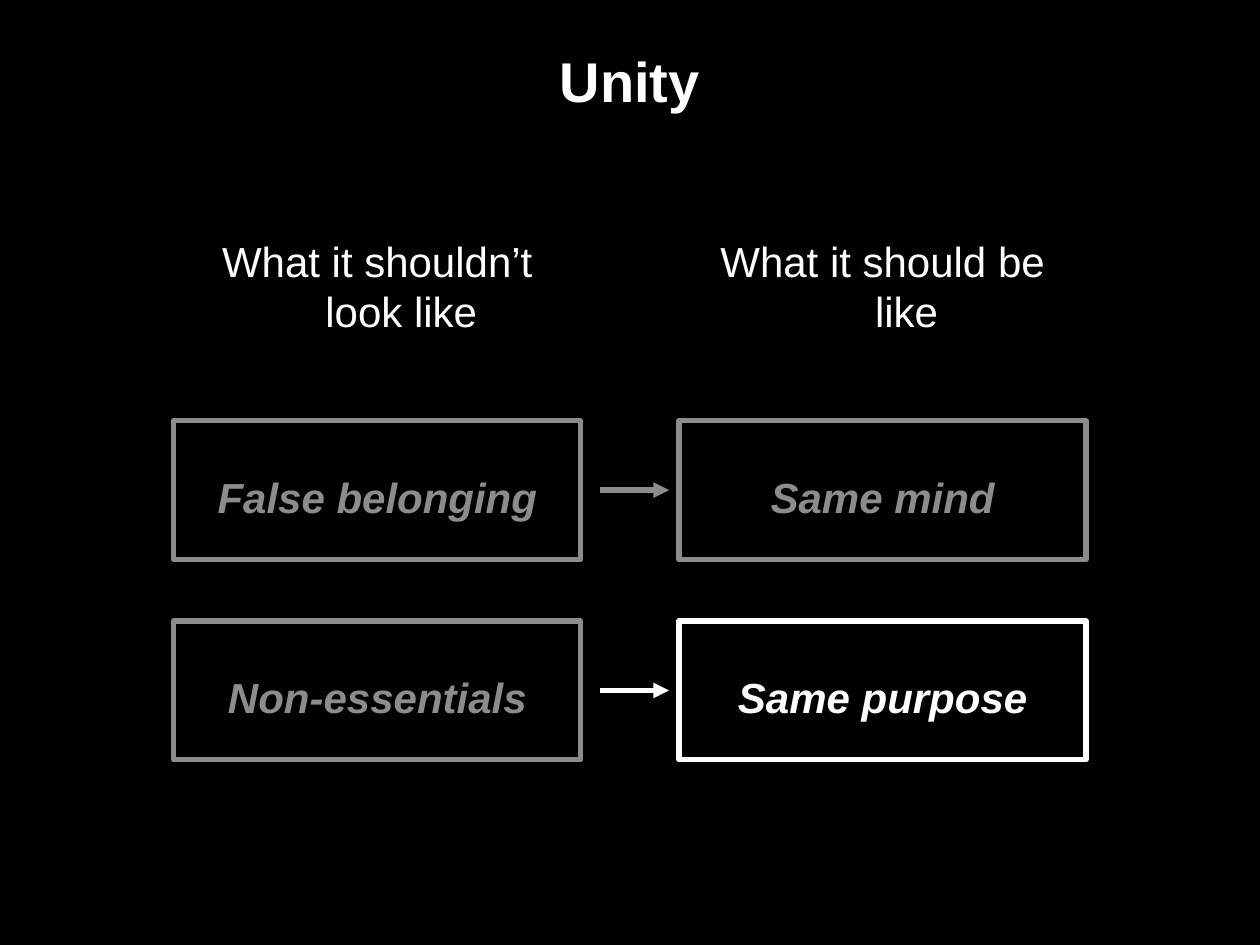
from lxml import etree
from pptx import Presentation
from pptx import util as u
from pptx.dml.color import RGBColor
from pptx.enum import shapes, text
from pptx.oxml import ns

COLORS = {"ground": "000000", "ink": "FFFFFF"}


class SlideBuilder:
    font = {"name": "Arial", "size": u.Pt(24)}
    stroke = u.Pt(3)

    def __init__(self, deck):
        self.page = deck.slides.add_slide(deck.slide_layouts[6])
        fill = self.page.background.fill
        fill.solid()
        fill.fore_color.rgb = self.color("ground")

    def color(self, name):
        return RGBColor.from_string(COLORS[name])

    def label(self, words, left, top, width, height, hanging=True, **style):
        box = self.page.shapes.add_textbox(*map(u.Inches, (left, top, width, height)))
        frame = box.text_frame
        frame.word_wrap = True
        frame.vertical_anchor = text.MSO_ANCHOR.TOP
        frame.margin_top = u.Inches(0.09)
        para = frame.paragraphs[0]
        para.alignment = text.PP_ALIGN.CENTER
        if hanging:
            indent = u.Inches(0.38)
            properties = para._p.get_or_add_pPr()
            properties.set("marL", str(indent))
            properties.set("indent", str(-indent))
            para.space_after = u.Pt(12)
        span = para.add_run()
        span.text = words
        for key, value in {**self.font, **style}.items():
            setattr(span.font, key, value)
        span.font.color.rgb = self.color("ink")

    def rectangle(self, left, top, width, height):
        box = self.page.shapes.add_shape(
            shapes.MSO_SHAPE.RECTANGLE, *map(u.Inches, (left, top, width, height)))
        box.shadow.inherit = False
        return box

    def frame(self, *place):
        box = self.rectangle(*place)
        box.fill.background()
        box.line.color.rgb = self.color("ink")
        box.line.width = self.stroke

    def veil(self, *place, opacity=45):
        box = self.rectangle(*place)
        box.line.fill.background()
        box.fill.solid()
        box.fill.fore_color.rgb = self.color("ground")
        tint = box._element.spPr.find(ns.qn("a:solidFill"))[0]
        etree.SubElement(tint, ns.qn("a:alpha"), val=str(opacity * 1000))

    def arrow(self, start, end, y):
        line = self.page.shapes.add_connector(
            shapes.MSO_CONNECTOR.STRAIGHT, *map(u.Inches, (start, y, end, y)))
        line.line.color.rgb = self.color("ink")
        line.line.width = self.stroke
        etree.SubElement(line.line._get_or_add_ln(), ns.qn("a:tailEnd"), type="triangle")
        etree.SubElement(line._element.spPr, ns.qn("a:effectLst"))


def main():
    deck = Presentation()
    deck.slide_width, deck.slide_height = u.Inches(10), u.Inches(7.5)
    slide = SlideBuilder(deck)
    slide.label("Unity", 0.5, 0.28, 9, 1.25, hanging=False, size=u.Pt(32), bold=True)

    columns = (1.38, 5.39)
    rows = (3.34, 4.93)
    width, height = 3.23, 1.1
    contrasts = (("False belonging", "Same mind"), ("Non-essentials", "Same purpose"))
    for top, pair in zip(rows, contrasts):
        for left, words in zip(columns, pair):
            slide.label(words, left + 0.16, top + 0.31, width - 0.32, 0.47,
                        bold=True, italic=True)
            slide.frame(left, top, width, height)

    headings = (("What it shouldn’t look like", 0), ("What it should be like", 0.16))
    for left, (words, inset) in zip(columns, headings):
        slide.label(words, left + inset, 1.78, width - 2 * inset, 0.47)

    for top in rows:
        slide.arrow(4.76, 5.31, top + height / 2)

    for left, top, veil_width in ((1.09, 4.84, 3.66), (1.09, 3.26, 3.65), (4.74, 3.26, 4.11)):
        slide.veil(left, top, veil_width, 1.28)

    deck.save("out.pptx")


if __name__ == "__main__":
    main()
